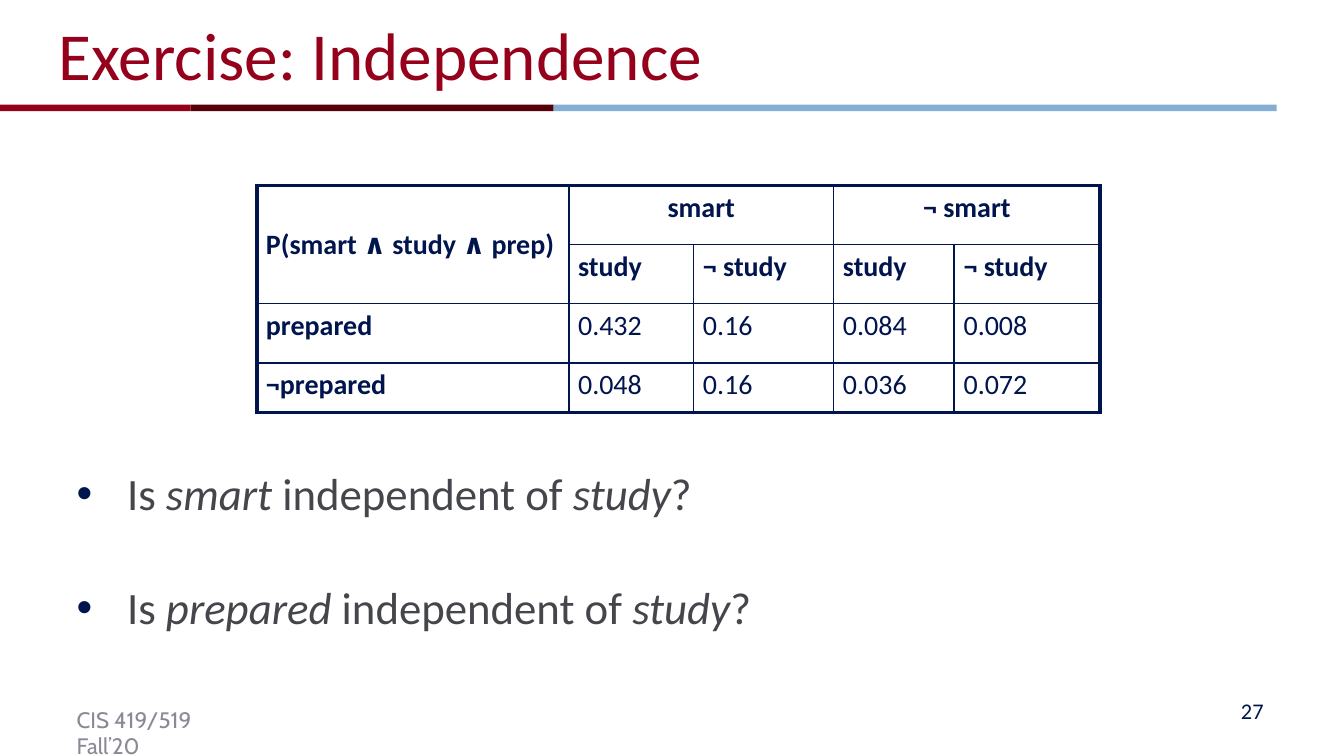
"""Build the slide "Exercise: Independence"."""
import pptx
import pptx.dml.color
import pptx.enum.shapes
import pptx.enum.text
import pptx.oxml.ns
import pptx.util
from lxml import etree

Pt = pptx.util.Pt
RGBColor = pptx.dml.color.RGBColor
ALIGN = pptx.enum.text.PP_ALIGN
ANCHOR = pptx.enum.text.MSO_ANCHOR
qn = pptx.oxml.ns.qn

CRIMSON = RGBColor(0x95, 0x00, 0x1A)
MAROON = RGBColor(0x57, 0x00, 0x0A)
SKY = RGBColor(0x82, 0xAF, 0xD3)
NAVY = RGBColor(0x00, 0x14, 0x4D)
CHARCOAL = RGBColor(0x44, 0x46, 0x4B)
GREY = RGBColor(0x89, 0x8A, 0x96)

ROWS = [
    ["P(smart ∧ study ∧ prep)", "smart", "", "¬ smart", ""],
    ["", "study", "¬ study", "study", "¬ study"],
    ["prepared", "0.432", "0.16", "0.084", "0.008"],
    ["¬prepared", "0.048", "0.16", "0.036", "0.072"],
]
MERGES = [((0, 0), (1, 0)), ((0, 1), (0, 2)), ((0, 3), (0, 4))]
QUESTIONS = [("smart", "study"), ("prepared", "study")]


def style_span(span, size, color, font="Calibri", bold=False, italic=False):
    """Set the font of one run."""
    span.font.name = font
    span.font.size = Pt(size)
    span.font.color.rgb = color
    span.font.bold = bold
    span.font.italic = italic


def add_frame(page, box, anchor=ANCHOR.TOP):
    """Add a wrapping text box and return its text frame."""
    frame = page.shapes.add_textbox(*map(Pt, box)).text_frame
    frame.word_wrap = True
    frame.vertical_anchor = anchor
    return frame


def add_label(page, box, text, size, color, font="Calibri",
              align=ALIGN.LEFT, anchor=ANCHOR.MIDDLE):
    """Add one line of text in a box."""
    frame = add_frame(page, box, anchor)
    frame.text = text
    para = frame.paragraphs[0]
    para.alignment = align
    style_span(para.runs[0], size, color, font)


def add_rule(page, box):
    """Add the three-coloured band under the title."""
    left, top, width, height = box
    for share, color in ((0.15, CRIMSON), (0.284, MAROON), (0.566, SKY)):
        band = page.shapes.add_shape(
            pptx.enum.shapes.MSO_SHAPE.RECTANGLE,
            Pt(left), Pt(top), Pt(width * share), Pt(height))
        band.shadow.inherit = False
        band.fill.solid()
        band.fill.fore_color.rgb = color
        band.line.fill.background()
        left += width * share


def add_border(cell, side, weight):
    """Draw one edge of a table cell."""
    line = etree.SubElement(cell._tc.get_or_add_tcPr(), qn(f"a:ln{side}"), w=str(Pt(weight)))
    fill = etree.SubElement(line, qn("a:solidFill"))
    etree.SubElement(fill, qn("a:srgbClr"), val=str(NAVY))


def style_cell(cell, row, col):
    """Set the text, edges and fill of a table cell by its place."""
    last_row, last_col = len(ROWS) - 1, len(ROWS[0]) - 1
    cell.margin_left = cell.margin_right = Pt(5)
    cell.margin_top = cell.margin_bottom = Pt(3)
    cell.vertical_anchor = ANCHOR.MIDDLE if row == col == 0 else ANCHOR.TOP
    cell.text = ROWS[row][col]
    para = cell.text_frame.paragraphs[0]
    para.space_before = Pt(3)
    para.alignment = ALIGN.CENTER if row == 0 and col > 0 else ALIGN.LEFT
    for span in para.runs:
        style_span(span, 15, NAVY, bold=row < 2 or col == 0)
    outer = {"L": col == 0, "R": col >= last_col or (cell.is_merge_origin and col == last_col - 1),
             "T": row == 0, "B": row == last_row}
    hidden = ("T" if col == 0 else "L") if cell.is_spanned else ""
    for side, is_outer in outer.items():
        if side != hidden:
            add_border(cell, side, 2.25 if is_outer else 1)
    cell.fill.background()


def add_probabilities(page, box):
    """Add the joint probability table."""
    left, top, width, height = box
    table = page.shapes.add_table(len(ROWS), len(ROWS[0]), *map(Pt, box)).table
    table.first_row = table.horz_banding = False
    for column, share in zip(table.columns, (0.37, 0.148, 0.166, 0.143, 0.173)):
        column.width = Pt(width * share)
    for line, share in zip(table.rows, (0.26, 0.26, 0.26, 0.22)):
        line.height = Pt(height * share)
    for start, end in MERGES:
        table.cell(*start).merge(table.cell(*end))
    for row, texts in enumerate(ROWS):
        for col in range(len(texts)):
            style_cell(table.cell(row, col), row, col)


def add_bullet(para):
    """Give a paragraph a hanging navy bullet."""
    props = para._p.get_or_add_pPr()
    props.set("marL", str(Pt(27)))
    props.set("indent", str(Pt(-27)))
    color = etree.SubElement(props, qn("a:buClr"))
    etree.SubElement(color, qn("a:srgbClr"), val=str(NAVY))
    etree.SubElement(props, qn("a:buFont"), typeface="Arial")
    etree.SubElement(props, qn("a:buChar"), char="•")


def add_questions(page, box):
    """Add the bulleted independence questions."""
    frame = add_frame(page, box)
    for index, (first, second) in enumerate(QUESTIONS):
        para = frame.add_paragraph() if index else frame.paragraphs[0]
        para.line_spacing = 0.9
        para.space_before = Pt(35.5 if index else 4.8)
        add_bullet(para)
        for place, text in enumerate(("Is ", first, " independent of ", second, "?")):
            span = para.add_run()
            span.text = text
            style_span(span, 24, CHARCOAL, italic=place % 2 == 1)


def main():
    """Build and save the deck."""
    deck = pptx.Presentation()
    deck.slide_width, deck.slide_height = Pt(720), Pt(405)
    page = deck.slides.add_slide(deck.slide_layouts[6])
    add_label(page, (34, 374.5, 109.5, 21.5), "CIS 419/519 Fall’20", 12, GREY,
              font="Cabin", anchor=ANCHOR.TOP)
    add_rule(page, (-0.5, 56, 684.5, 3.6))
    add_questions(page, (34, 249, 648, 112))
    add_label(page, (516, 370, 168, 21.5), "27", 12, NAVY, align=ALIGN.RIGHT)
    add_label(page, (24.5, 1.5, 648, 54.5), "Exercise: Independence", 36, CRIMSON)
    add_probabilities(page, (137.5, 99.4, 452, 121.7))
    deck.save("out.pptx")


if __name__ == "__main__":
    main()
